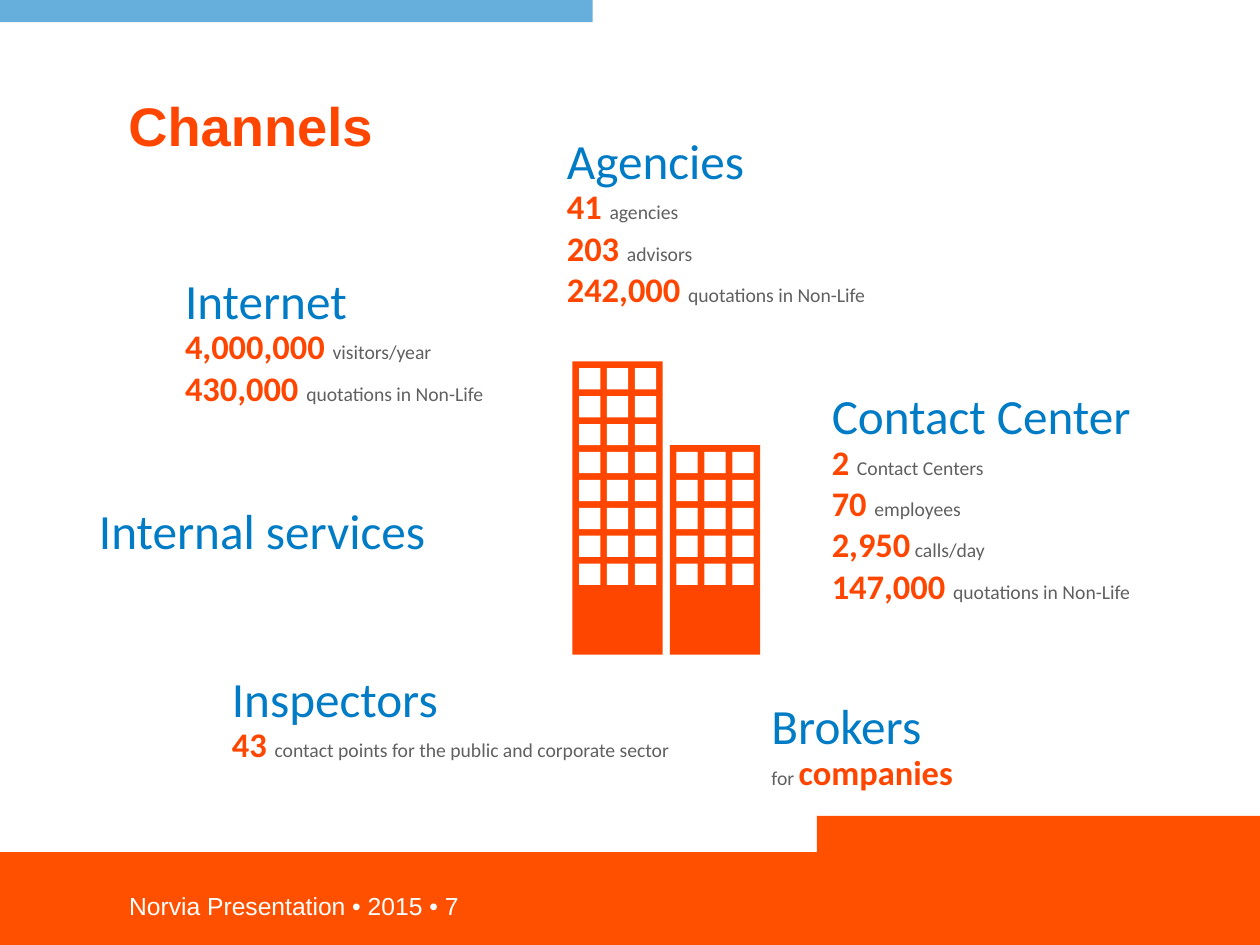
"""Build the Channels slide: sales channels arranged around an office block."""
from lxml.etree import SubElement
from pptx import Presentation
from pptx.dml.color import RGBColor
from pptx.enum.shapes import MSO_SHAPE
from pptx.enum.text import MSO_ANCHOR, MSO_AUTO_SIZE
from pptx.oxml.ns import qn
from pptx.util import Pt

TITLE = "Channels"
FOOTER = "Norvia Presentation • 2015 • 7"

CHANNELS = [
    ("Internet", (143.3, 236.9, 283.7, 99.4), [
        [("figure", "4,000,000 "), ("note", "visitors/year")],
        [("figure", "430,000 "), ("note", "quotations in Non-Life")],
    ]),
    ("Contact Center", (668.9, 330.5, 323.3, 167)), 
    ("Agencies", (453.6, 123.1, 313.2, 133.2), [
        [("figure", "41 "), ("note", "agencies")],
        [("figure", "203 "), ("note", "advisors")],
        [("figure", "242,000 "), ("note", "quotations in Non-Life")],
    ]),
    ("Brokers", (619.9, 582.5, 404, 65.5), [
        [("note", "for "), ("figure", "companies")],
    ]),
    ("Inspectors", (181.4, 560.2, 408.2, 65.5), [
        [("figure", "43 "),
         ("note", "contact points for the public and corporate sector")],
    ]),
    ("Internal services", (73.4, 424.1, 374.4, 31.7), []),
]
CHANNELS[1] += ([
    [("figure", "2 "), ("note", "Contact Centers")],
    [("figure", "70 "), ("note", "employees")],
    [("figure", "2,950"), ("note", " calls/day")],
    [("figure", "147,000 "), ("note", "quotations in Non-Life")],
],)

THEME = {
    "title": ("Arial", 44.1, "FF4600", True),
    "footer": ("Arial", 20, "FFFFFF", False),
    "heading": ("Calibri", 40, "007BC6", False),
    "figure": ("Calibri", 28, "FF4600", True),
    "note": ("Calibri", 16, "606060", False),
    "band": "FF5000",
    "accent": "007BC6",
    "building": "FF4600",
    "window": "FFFFFF",
}

SLIDE_WIDTH, SLIDE_HEIGHT = 1024, 768
BANDS = [(0, 692.6, SLIDE_WIDTH), (663.8, 663.1, SLIDE_WIDTH - 663.8)]
BUILDINGS = [(465.1, 8), (544.3, 5)]
GROUND, BUILDING_WIDTH, BASE_HEIGHT = 532, 73.4, 56.7
WINDOW_COLUMNS, WINDOW_SIZE, WINDOW_PITCH, WINDOW_MARGIN = 3, 17.3, 22.7, 5.5


def style(font, role):
    name, size, color, bold = THEME[role]
    font.name, font.size, font.bold = name, Pt(size), bold
    font.color.rgb = RGBColor.from_string(color)


def add_block(page, left, top, width, height, color):
    block = page.shapes.add_shape(
        MSO_SHAPE.RECTANGLE, Pt(left), Pt(top), Pt(width), Pt(height))
    block.shadow.inherit = False
    block.fill.solid()
    block.fill.fore_color.rgb = RGBColor.from_string(THEME[color])
    block.line.fill.background()
    return block


def add_text(page, area, text, role):
    box = page.shapes.add_textbox(*(Pt(length) for length in area))
    frame = box.text_frame
    frame.word_wrap = True
    frame.vertical_anchor = MSO_ANCHOR.TOP
    para = frame.paragraphs[0]
    para.text = text
    style(para.font, role)
    return frame


def add_frame(page):
    for left, top, width in BANDS:
        add_block(page, left, top, width, SLIDE_HEIGHT - top, "band")
    accent = add_block(page, 0, 0, 481.7, 18, "accent")
    color = accent.fill._xPr.find(".//" + qn("a:srgbClr"))
    SubElement(color, qn("a:alpha"), val="60000")
    add_text(page, (97.9, 720.7, 319, 31.7), FOOTER, "footer")
    title = add_text(page, (100.1, 66.2, 823.7, 60), TITLE, "title")
    title.margin_left = title.margin_right = Pt(4.3)
    title.margin_top, title.margin_bottom = Pt(9), Pt(0)


def add_channel(page, heading, area, lines):
    frame = add_text(page, area, heading, "heading")
    frame.auto_size = MSO_AUTO_SIZE.SHAPE_TO_FIT_TEXT
    frame.paragraphs[0].line_spacing = 0.5
    for line in lines:
        para = frame.add_paragraph()
        for role, text in line:
            span = para.add_run()
            span.text = text
            style(span.font, role)


def add_building(page, left, floors):
    height = floors * WINDOW_PITCH + BASE_HEIGHT
    roof = GROUND - height
    add_block(page, left, roof, BUILDING_WIDTH, height, "building")
    for floor in range(floors):
        for column in range(WINDOW_COLUMNS):
            add_block(page, left + WINDOW_MARGIN + column * WINDOW_PITCH,
                      roof + WINDOW_MARGIN + floor * WINDOW_PITCH,
                      WINDOW_SIZE, WINDOW_SIZE, "window")


def main():
    deck = Presentation()
    deck.slide_width, deck.slide_height = Pt(SLIDE_WIDTH), Pt(SLIDE_HEIGHT)
    page = deck.slides.add_slide(deck.slide_layouts[6])
    add_frame(page)
    for channel in CHANNELS:
        add_channel(page, *channel)
    for left, floors in BUILDINGS:
        add_building(page, left, floors)
    deck.save("out.pptx")


if __name__ == "__main__":
    main()
